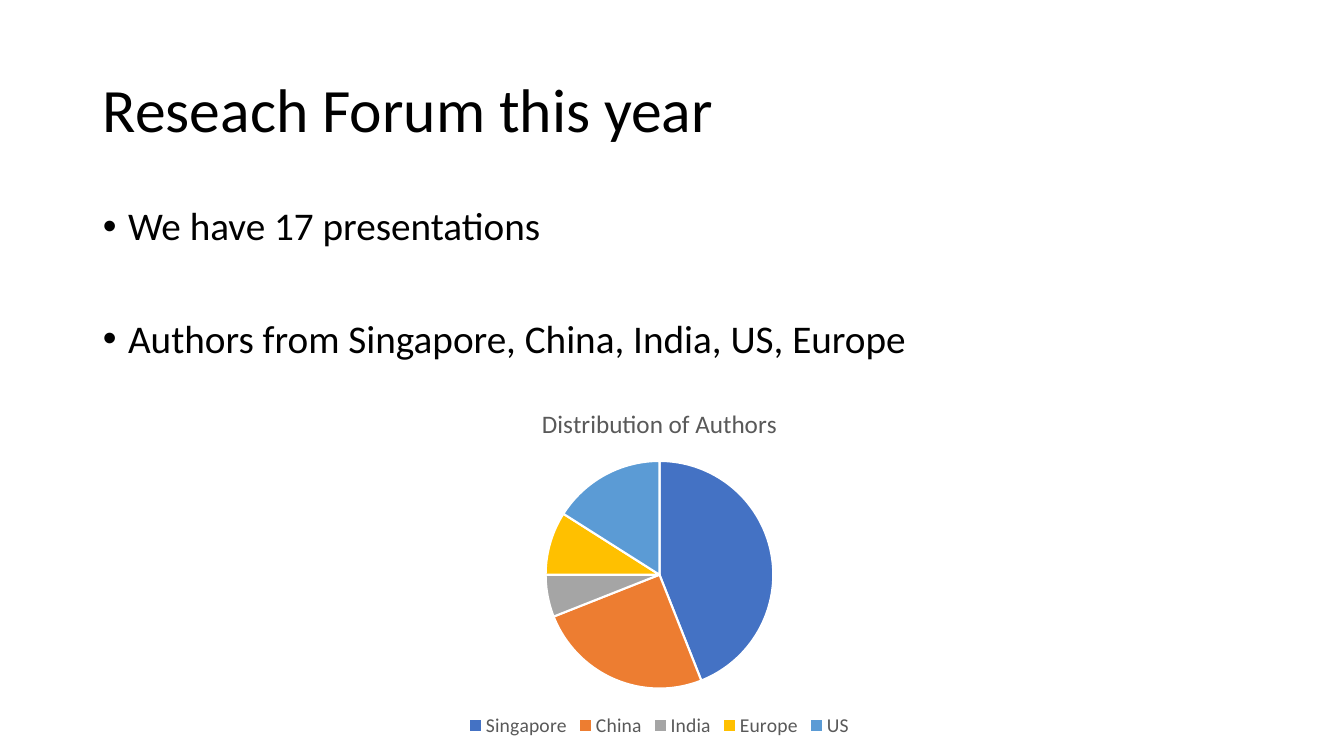
from lxml import etree
from pptx import Presentation, util as u
from pptx.chart.data import CategoryChartData
from pptx.dml.color import RGBColor
from pptx.enum import chart as ch, text
from pptx.oxml import ns

PX = 914400 / 100.8
BLACK = RGBColor(0x00, 0x00, 0x00)
WHITE = RGBColor(0xFF, 0xFF, 0xFF)
GRAY = RGBColor(0x59, 0x59, 0x59)
BLUE = RGBColor(0x44, 0x72, 0xC4)
ORANGE = RGBColor(0xED, 0x7D, 0x31)
SILVER = RGBColor(0xA5, 0xA5, 0xA5)
GOLD = RGBColor(0xFF, 0xC0, 0x00)
SKY = RGBColor(0x5B, 0x9B, 0xD5)


def box(*lengths):
    return [u.Emu(round(length * PX)) for length in lengths]


def style(font, size, color):
    font.name = "Calibri"
    font.size = u.Pt(size)
    font.color.rgb = color
    font.bold = False


prs = Presentation()
prs.slide_width, prs.slide_height = box(1344, 756)
slide = prs.slides.add_slide(prs.slide_layouts[6])

heading = slide.shapes.add_textbox(*box(93, 40, 1159, 146)).text_frame
heading.word_wrap = True
heading.vertical_anchor = text.MSO_ANCHOR.MIDDLE
heading_line = heading.paragraphs[0]
heading_line.line_spacing = 0.9
heading_run = heading_line.add_run()
heading_run.text = "Reseach Forum this year"
style(heading_run.font, 44, BLACK)

facts = slide.shapes.add_textbox(*box(93, 202, 1159, 480)).text_frame
facts.word_wrap = True
for i, fact in enumerate([
    "We have 17 presentations",
    "Authors from Singapore, China, India, US, Europe",
]):
    fact_line = facts.add_paragraph() if i else facts.paragraphs[0]
    fact_line.line_spacing = 0.9
    if i:
        fact_line.space_before = u.Pt(50)
    props = fact_line._p.get_or_add_pPr()
    props.set("marL", "228600")
    props.set("indent", "-228600")
    etree.SubElement(props, ns.qn("a:buFont")).set("typeface", "Arial")
    etree.SubElement(props, ns.qn("a:buChar")).set("char", "•")
    fact_run = fact_line.add_run()
    fact_run.text = fact
    style(fact_run.font, 28, BLACK)

authors = [
    ("Singapore", 44, BLUE),
    ("China", 25, ORANGE),
    ("India", 6, SILVER),
    ("Europe", 9, GOLD),
    ("US", 16, SKY),
]
shares = CategoryChartData()
shares.categories = [region for region, _, _ in authors]
shares.add_series("Series 1", [share for _, share, _ in authors])
pie = slide.shapes.add_chart(
    ch.XL_CHART_TYPE.PIE, *box(333, 389, 653, 353), shares
).chart
style(pie.font, 10, BLACK)
pie.has_title = True
pie_title = pie.chart_title.text_frame.paragraphs[0].add_run()
pie_title.text = "Distribution of Authors"
style(pie_title.font, 18, GRAY)
pie.chart_title.include_in_layout = False
pie.has_legend = True
pie.legend.position = ch.XL_LEGEND_POSITION.BOTTOM
pie.legend.include_in_layout = False
style(pie.legend.font, 14, GRAY)
plot = pie.plots[0]
plot.vary_by_categories = True
for i, (_, _, color) in enumerate(authors):
    slice_format = plot.series[0].points[i].format
    slice_format.fill.solid()
    slice_format.fill.fore_color.rgb = color
    slice_format.line.color.rgb = WHITE
    slice_format.line.width = u.Pt(1.5)

prs.save("out.pptx")
